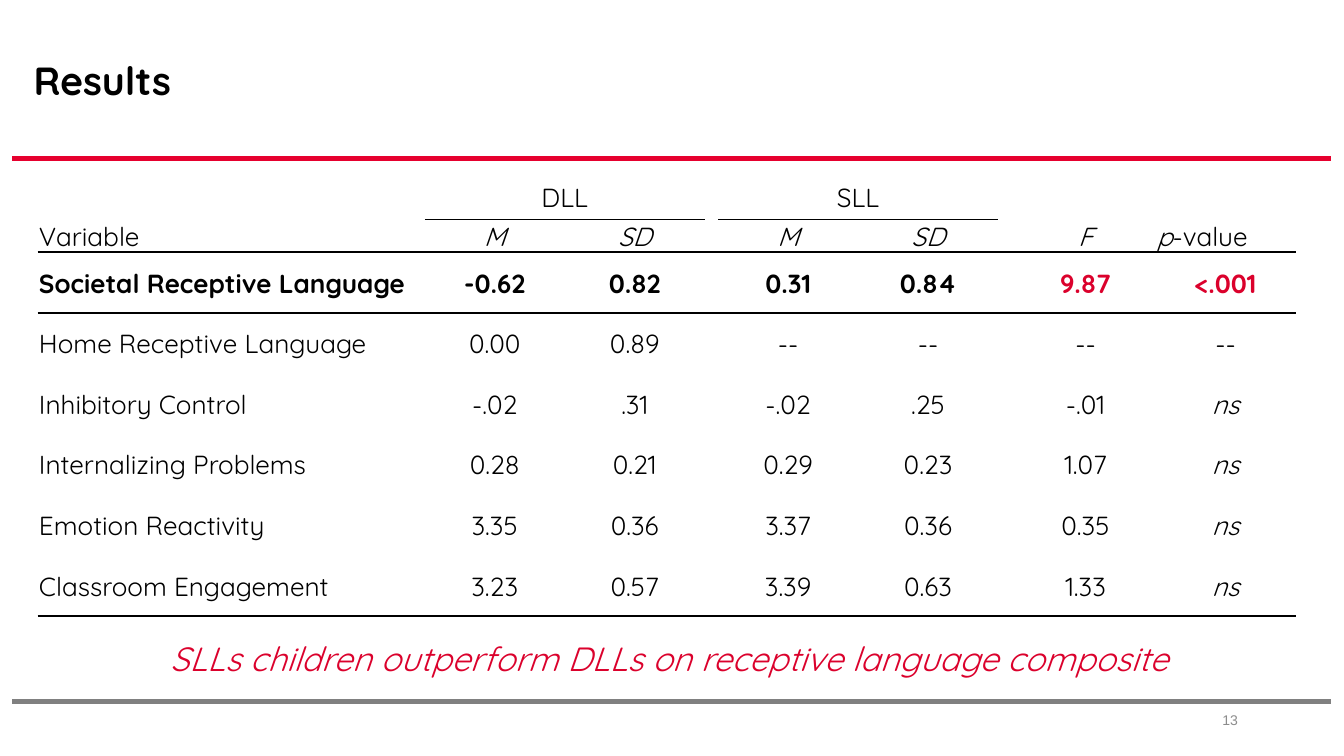
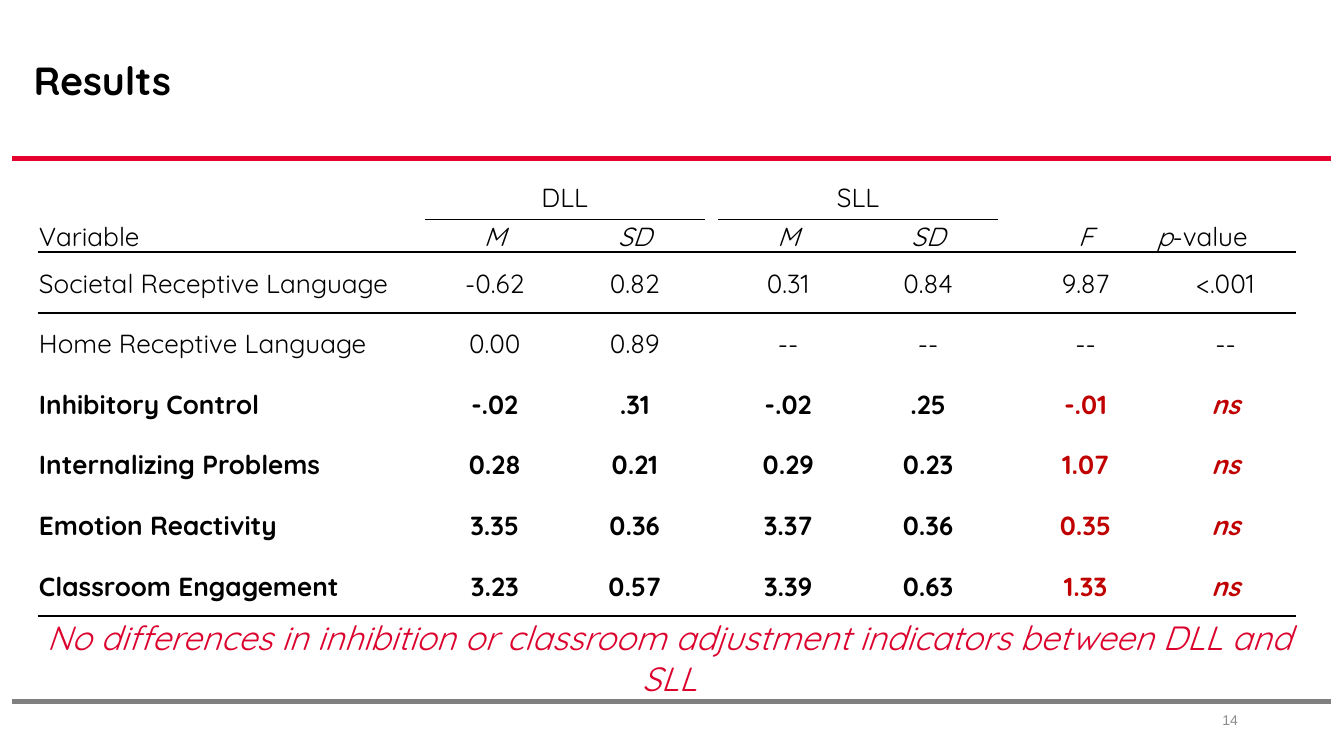
from lxml.etree import SubElement
from pptx import Presentation
from pptx.dml.color import RGBColor
from pptx.enum.shapes import MSO_CONNECTOR
from pptx.enum.text import MSO_ANCHOR as Anchor, MSO_AUTO_SIZE as AutoSize, PP_ALIGN as Align
from pptx.oxml.ns import qn
from pptx.util import Pt

BLACK = RGBColor(0x00, 0x00, 0x00)
BAND_RED = RGBColor(0xE6, 0x00, 0x2E)
BAND_GRAY = RGBColor(0x80, 0x80, 0x80)
NUMBER_GRAY = RGBColor(0x8C, 0x8C, 0x8C)
CRIMSON = RGBColor(0xDB, 0x01, 0x2C)
DARK_RED = RGBColor(0xC0, 0x00, 0x00)
FONT = "Quicksand"
NO_STYLE = "{2D5ABB26-0587-4C30-8999-92F81FD0307C}"

SLIDE_BOX = (0, 0, 720, 405)
TABLE_BOX = (20.2, 93.6, 674, 236.2)
COLUMN_WIDTHS = [207.4, 75, 75, 7.2, 75, 75, 9.4, 75, 75]
ROW_HEIGHTS = [20.2, 16.6] + [32.5] * 6
GROUPS = {1: "DLL", 4: "SLL"}
STATISTICS = ["Variable", "M", "SD", "", "M", "SD", "", "F", "p-value"]
RESULTS = [
    ["Societal Receptive Language", "-0.62", "0.82", "", "0.31", "0.84", "", "9.87", "<.001"],
    ["Home Receptive Language", "0.00", "0.89", "", "--", "--", "", "--", "--"],
    ["Inhibitory Control", "-.02", ".31", "", "-.02", ".25", "", "-.01", "ns"],
    ["Internalizing Problems", "0.28", "0.21", "", "0.29", "0.23", "", "1.07", "ns"],
    ["Emotion Reactivity", "3.35", "0.36", "", "3.37", "0.36", "", "0.35", "ns"],
    ["Classroom Engagement", "3.23", "0.57", "", "3.39", "0.63", "", "1.33", "ns"],
]


def add_run(paragraph, text, size, color=BLACK, bold=False, italic=False, font=FONT):
    run = paragraph.add_run()
    run.text = text
    run.font.name = font
    run.font.size = Pt(size)
    run.font.color.rgb = color
    run.font.bold = bold
    run.font.italic = italic


def add_band(slide, box, offset, color):
    left, top, width, _ = box
    y = Pt(top + offset)
    band = slide.shapes.add_connector(
        MSO_CONNECTOR.STRAIGHT, Pt(left + 6.5), y, Pt(left + width - 7.2), y)
    band.line.color.rgb = color
    band.line.width = Pt(3)
    SubElement(band._element.spPr, qn("a:effectLst"))


def add_frame(slide, box, title_text, number):
    """Title, the two bands and the slide number."""
    left, top, width, height = box
    title = slide.shapes.title
    title.left, title.top = Pt(left + 10.8), Pt(top + 26.6)
    title.width, title.height = Pt(628), Pt(32.4)
    title_frame = title.text_frame
    title_frame.auto_size = AutoSize.SHAPE_TO_FIT_TEXT
    title_frame.vertical_anchor = Anchor.TOP
    title_frame.paragraphs[0].alignment = Align.LEFT
    add_run(title_frame.paragraphs[0], title_text, 21, bold=True)

    add_band(slide, box, 85, BAND_RED)
    add_band(slide, box, 375.8, BAND_GRAY)

    footer = slide.shapes.add_textbox(
        Pt(left + width - 211.7), Pt(top + height - 29.9), Pt(162), Pt(21.6)).text_frame
    footer.word_wrap = True
    footer.vertical_anchor = Anchor.MIDDLE
    footer.paragraphs[0].alignment = Align.RIGHT
    add_run(footer.paragraphs[0], str(number), 7.5, NUMBER_GRAY, font="Arial")


def add_finding(slide, box, text):
    left, top, width, height = box
    finding = slide.shapes.add_textbox(Pt(left), Pt(top), Pt(width), Pt(height)).text_frame
    finding.word_wrap = True
    finding.margin_left = Pt(10.8)
    finding.margin_top = Pt(26)
    finding.paragraphs[0].alignment = Align.CENTER
    add_run(finding.paragraphs[0], text, 18, CRIMSON, italic=True)


def rule_below(row, column):
    """Width of the rule under a cell, or 0 for none."""
    if row == 0:
        return 0.5 if column in (1, 2, 4, 5) else 0
    return 1 if row in (1, len(ROW_HEIGHTS) - 1) else 0


def format_cell(cell, row, column):
    rules = {"a:lnT": rule_below(row - 1, column) if row else 0,
             "a:lnB": rule_below(row, column)}
    for tag, width in rules.items():
        if width:
            line = SubElement(cell._tc.get_or_add_tcPr(), qn(tag), w=str(Pt(width)))
            SubElement(SubElement(line, qn("a:solidFill")), qn("a:srgbClr"), val=str(BLACK))
    cell.fill.background()
    cell.vertical_anchor = Anchor.BOTTOM if row < 2 else Anchor.MIDDLE
    if row or column not in GROUPS:
        cell.margin_left = cell.margin_right = cell.margin_top = Pt(0.7)
        cell.margin_bottom = 0


def fill_cell(cell, text, row, column, bold, color):
    paragraph = cell.text_frame.paragraphs[0]
    if not text:
        SubElement(paragraph._p, qn("a:endParaRPr"), sz="1400")
        return
    if column and text != "p-value":
        paragraph.alignment = Align.CENTER
    if text == "p-value":
        add_run(paragraph, "p", 14, italic=True)
        add_run(paragraph, "-value", 14)
    else:
        italic = text == "ns" or (row == 1 and column > 0)
        add_run(paragraph, text, 14, color, bold, italic)


def add_results_table(slide, box, emphasized, accent):
    """Results with the emphasized variables in bold and their tests in the accent."""
    left, top, width, height = box
    group_row = [GROUPS.get(column, "") for column in range(len(COLUMN_WIDTHS))]
    rows = [group_row, STATISTICS] + RESULTS
    table = slide.shapes.add_table(
        len(rows), len(COLUMN_WIDTHS), Pt(left), Pt(top), Pt(width), Pt(height)).table
    table.first_row = table.horz_banding = False
    table._tbl.tblPr.find(qn("a:tableStyleId")).text = NO_STYLE
    for column, column_width in zip(table.columns, COLUMN_WIDTHS):
        column.width = Pt(column_width)
    for row, row_height in zip(table.rows, ROW_HEIGHTS):
        row.height = Pt(row_height)
    for column in GROUPS:
        table.cell(0, column).merge(table.cell(0, column + 1))

    for r, texts in enumerate(rows):
        bold = texts[0] in emphasized
        for c, text in enumerate(texts):
            cell = table.cell(r, c)
            format_cell(cell, r, c)
            fill_cell(cell, text, r, c, bold, accent if bold and c >= 7 else BLACK)


def add_results_slide(deck, number, finding, finding_box, emphasized, accent):
    slide = deck.slides.add_slide(deck.slide_layouts[5])
    add_frame(slide, SLIDE_BOX, "Results", number)
    add_finding(slide, finding_box, finding)
    add_results_table(slide, TABLE_BOX, emphasized, accent)


def main():
    deck = Presentation()
    deck.slide_width, deck.slide_height = Pt(SLIDE_BOX[2]), Pt(SLIDE_BOX[3])
    variables = [result[0] for result in RESULTS]
    add_results_slide(
        deck, 13, "SLLs children outperform DLLs on receptive language composite",
        (6.5, 316, 700.6, 72.7), variables[:1], CRIMSON)
    add_results_slide(
        deck, 14,
        "No differences in inhibition or classroom adjustment indicators between DLL and SLL",
        (6.5, 304.6, 700.6, 94.3), variables[2:], DARK_RED)
    deck.save("out.pptx")


if __name__ == "__main__":
    main()
